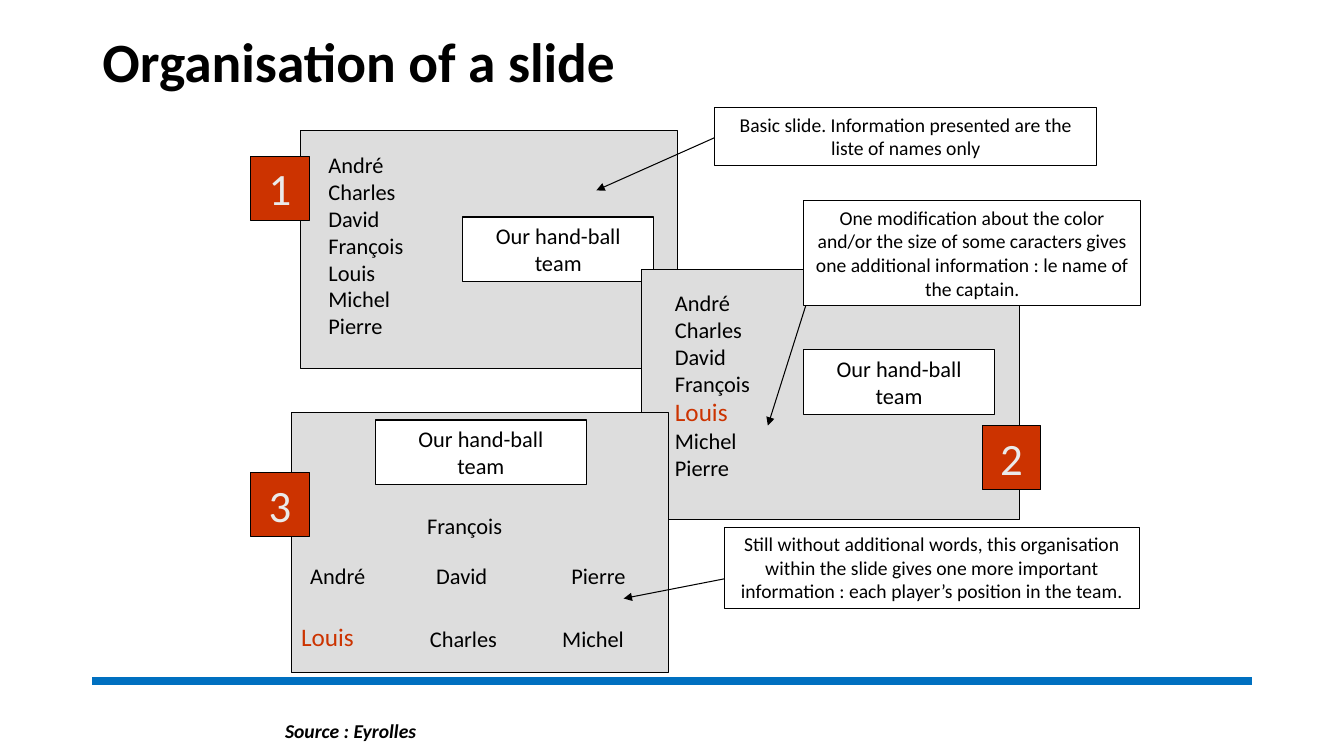
from lxml import etree
from pptx import Presentation
from pptx.dml.color import RGBColor
from pptx.enum.shapes import MSO_CONNECTOR, MSO_SHAPE
from pptx.enum.text import MSO_ANCHOR, PP_ALIGN
from pptx.oxml.ns import qn
from pptx.util import Pt

RECTANGLE = MSO_SHAPE.RECTANGLE
STRAIGHT = MSO_CONNECTOR.STRAIGHT
LEFT, CENTER = PP_ALIGN.LEFT, PP_ALIGN.CENTER
TOP, MIDDLE = MSO_ANCHOR.TOP, MSO_ANCHOR.MIDDLE

BLACK, WHITE, GREY = "000000", "FFFFFF", "DDDDDD"
RED, PALE, BLUE = "CC3300", "EAEAEA", "0070C0"
FONT = "Calibri"
CAPTAIN = "Louis"
TEAM = ["André", "Charles", "David", "François", CAPTAIN, "Michel", "Pierre"]
TEAM_LABEL = ["Our hand-ball team"]

PLAYER_POSITIONS = [
    ("François", 298, 362, 68.5),
    ("André", 214.5, 398, 55),
    ("David", 304.5, 398, 51),
    ("Pierre", 401, 398, 54),
    (CAPTAIN, 208, 440.5, 52.5),
    ("Charles", 300, 443, 63),
    ("Michel", 394.5, 443, 59),
]
ARROWS = [
    (522.5, 93, 426, 136),
    (593.5, 161.5, 548.5, 304),
    (589, 399.5, 445.5, 427.5),
]
CALLOUTS = [
    ("Still without additional words, this organisation within the slide gives "
     "one more important information : each player’s position in the team.",
     (517.5, 376.5, 296.5, 58.5)),
    ("One modification about the color and/or the size of some caracters gives "
     "one additional information : le name of the captain.",
     (574, 143.5, 241, 75)),
    ("Basic slide. Information presented are the liste of names only",
     (510.5, 77, 273, 41)),
]
BADGES = [("1", 179, 111.5), ("2", 701.5, 304), ("3", 179, 337.5)]


def color(value):
    """Turn a hex string into a colour."""
    return RGBColor.from_string(value)


def write(frame, lines, size=16, ink=BLACK, bold=False, italic=False,
          align=LEFT, anchor=TOP, wrap=True, spacing=1.0, highlight=None):
    """Write one paragraph per line, with the highlighted line larger and red."""
    frame.word_wrap = wrap
    frame.vertical_anchor = anchor
    for index, line in enumerate(lines):
        paragraph = frame.paragraphs[0] if index == 0 else frame.add_paragraph()
        paragraph.alignment = align
        paragraph.line_spacing = spacing
        run = paragraph.add_run()
        run.text = line
        special = line == highlight
        run.font.name = FONT
        run.font.size = Pt(18 if special else size)
        run.font.bold = bold
        run.font.italic = italic
        run.font.color.rgb = color(RED if special else ink)


def add_box(slide, bounds, fill, lines=(), **text_format):
    """Add a thinly outlined rectangle with optional centred text."""
    shape = slide.shapes.add_shape(RECTANGLE, *map(Pt, bounds))
    shape.shadow.inherit = False
    shape.fill.solid()
    shape.fill.fore_color.rgb = color(fill)
    shape.line.color.rgb = color(BLACK)
    shape.line.width = Pt(0.75)
    write(shape.text_frame, lines, align=CENTER, **text_format)


def add_text(slide, bounds, lines, **text_format):
    """Add a text box that does not wrap."""
    box = slide.shapes.add_textbox(*map(Pt, bounds))
    write(box.text_frame, lines, wrap=False, **text_format)


def add_line(slide, ends, stroke=BLACK, width=0.75, arrow=False):
    """Add a straight line, with an arrowhead at its end if asked."""
    line = slide.shapes.add_connector(STRAIGHT, *map(Pt, ends))
    line.line.color.rgb = color(stroke)
    line.line.width = Pt(width)
    properties = line._element.spPr
    if arrow:
        outline = properties.find(qn("a:ln"))
        etree.SubElement(outline, qn("a:tailEnd"), type="triangle")
    etree.SubElement(properties, qn("a:effectLst"))


def add_title(slide, text):
    """Place and fill the title placeholder."""
    title = slide.shapes.title
    title.left, title.top, title.width, title.height = map(
        Pt, (66, 19.5, 828, 52.5))
    write(title.text_frame, [text], size=39.6, bold=True, anchor=MIDDLE,
          spacing=0.9)


def add_example_slides(slide):
    """Add the three overlapping example slides."""
    add_box(slide, (214.5, 93, 269.5, 170), GREY)
    add_text(slide, (227.5, 104.5, 68.5, 143), TEAM)
    add_box(slide, (330.5, 155, 136.5, 46), WHITE, TEAM_LABEL)

    add_box(slide, (458.5, 192.5, 269.5, 178.5), GREY)
    add_text(slide, (475, 203, 68.5, 145.5), TEAM, highlight=CAPTAIN)
    add_box(slide, (574, 250, 136.5, 46), WHITE, TEAM_LABEL)

    add_box(slide, (208, 294.5, 269.5, 186), GREY)
    add_box(slide, (268, 300, 151, 46), WHITE, ["Our hand-ball", "team"])
    for name, left, top, width in PLAYER_POSITIONS:
        add_text(slide, (left, top, width, 26.5), [name], highlight=CAPTAIN)


def main():
    """Build and save the presentation."""
    presentation = Presentation()
    presentation.slide_width, presentation.slide_height = Pt(960), Pt(540)
    slide = presentation.slides.add_slide(presentation.slide_layouts[5])

    add_title(slide, "Organisation of a slide")
    add_line(slide, (66, 486.5, 894, 486.5), stroke=BLUE, width=6)
    add_example_slides(slide)
    for ends in ARROWS:
        add_line(slide, ends, arrow=True)
    for text, bounds in CALLOUTS:
        add_box(slide, bounds, WHITE, [text], size=14)
    for number, left, top in BADGES:
        add_box(slide, (left, top, 42, 46), RED, [number], size=32, ink=PALE)
    add_text(slide, (196.5, 510, 109, 24.5), ["Source : Eyrolles"], size=14,
             bold=True, italic=True)

    presentation.save("out.pptx")


if __name__ == "__main__":
    main()
